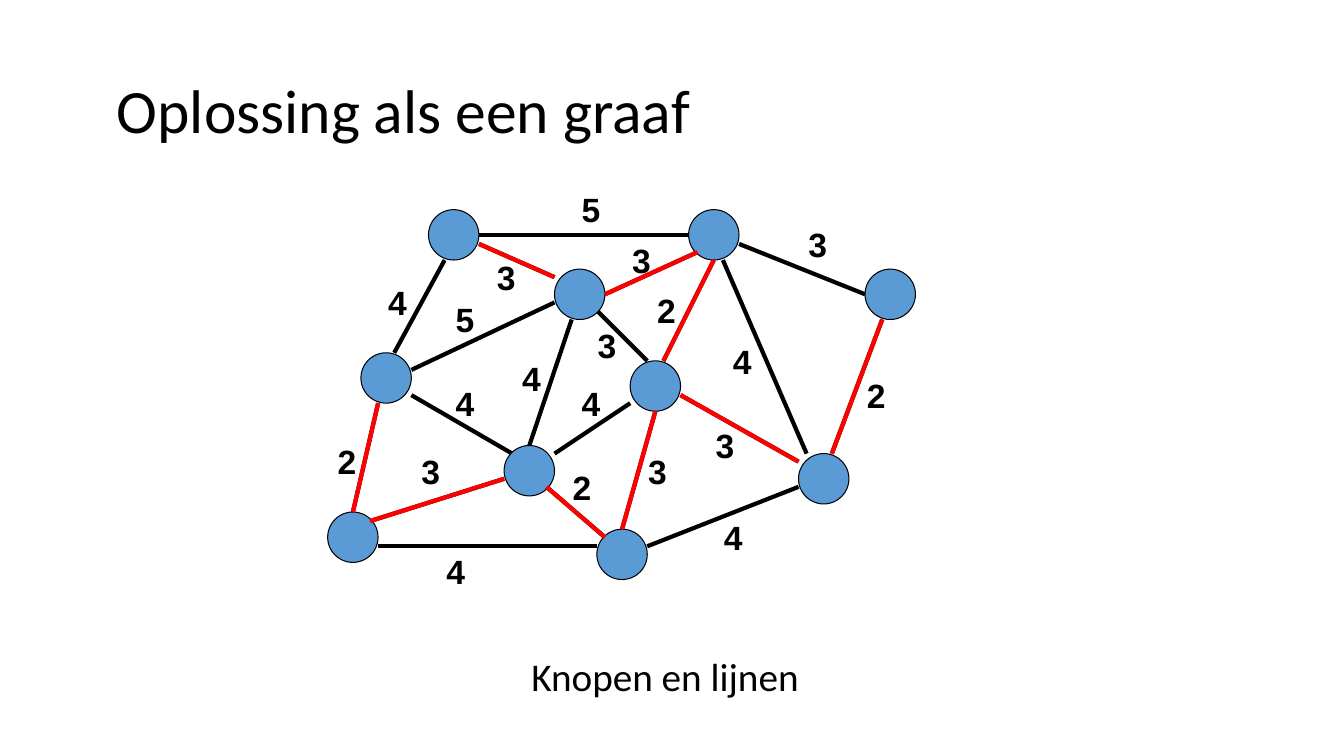
"""Build a slide that shows a weighted graph with its solution tree in red."""
from dataclasses import dataclass

from lxml import etree
from pptx import Presentation
from pptx.dml.color import RGBColor
from pptx.enum import shapes, text
from pptx.oxml import ns
from pptx.util import Inches, Pt

TITLE = " Oplossing als een graaf"
CAPTION = "Knopen en lijnen"

NODES = [
    (4.25, 2.08), (6.83, 2.08), (8.58, 2.67), (6.25, 3.58), (5.5, 2.67),
    (3.58, 3.5), (3.25, 5.08), (5, 4.42), (5.92, 5.25), (7.92, 4.5),
]

# start, end, weight, weight position
TREE_EDGES = [
    ((3.67, 5.17), (5, 4.75), 3, (4.08, 4.42)),
    ((3.75, 4), (3.5, 5.08), 2, (3.25, 4.33)),
    ((5.42, 4.83), (6, 5.33), 2, (5.58, 4.58)),
    ((4.75, 2.42), (5.5, 2.75), 3, (4.83, 2.5)),
    ((6, 2.92), (6.92, 2.5), 3, (6.17, 2.33)),
    ((6.5, 4.08), (6.17, 5.25), 3, (6.33, 4.42)),
    ((6.75, 3.92), (7.92, 4.58), 3, (7, 4.17)),
    ((8.75, 3.17), (8.25, 4.5), 2, (8.5, 3.67)),
    ((7.08, 2.58), (6.58, 3.58), 2, (6.42, 2.83)),
]
OTHER_EDGES = [
    ((3.91, 3.5), (4.41, 2.58), 4, (3.75, 2.75)),
    ((3.75, 5.42), (5.92, 5.42), 4, (4.33, 5.42)),
    ((4.08, 3.67), (5.5, 3), 5, (4.42, 2.92)),
    ((4.75, 2.33), (6.83, 2.33), 5, (5.67, 1.83)),
    ((7.33, 2.42), (8.58, 2.92), 3, (7.92, 2.17)),
    ((5.67, 3.17), (5.25, 4.42), 4, (5.08, 3.5)),
    ((4.08, 3.92), (5.08, 4.5), 4, (4.42, 3.75)),
    ((5.92, 3.08), (6.42, 3.58), 3, (5.83, 3.17)),
    ((5.5, 4.5), (6.25, 4), 4, (5.67, 3.75)),
    ((6.42, 5.42), (7.92, 4.83), 4, (7.08, 5.08)),
    ((7.17, 2.58), (8, 4.5), 4, (7.17, 3.33)),
]
EDGES = OTHER_EDGES + TREE_EDGES


@dataclass(frozen=True)
class Theme:
    """Colours, fonts and sizes of the slide."""
    ink: RGBColor = RGBColor(0, 0, 0)
    tree: RGBColor = RGBColor(0xFF, 0, 0)
    node: RGBColor = RGBColor(0x5B, 0x9B, 0xD5)
    text_font: str = "Calibri"
    weight_font: str = "Arial"
    title_size: int = 44
    caption_size: int = 28
    weight_size: int = 24
    edge_width: float = 3
    node_outline: float = 0.75


THEME = Theme()


def style(paragraph, font, size, bold=False):
    """Set the font of a whole paragraph."""
    paragraph.font.name = font
    paragraph.font.size = Pt(size)
    paragraph.font.bold = bold
    paragraph.font.color.rgb = THEME.ink


def fill_placeholder(holder, words, box, size, spacing):
    """Place a template placeholder and write one left-aligned line in it."""
    holder.left, holder.top, holder.width, holder.height = map(Inches, box)
    holder.text_frame.text = words
    holder.text_frame.auto_size = text.MSO_AUTO_SIZE.NONE
    line = holder.text_frame.paragraphs[0]
    line.alignment = text.PP_ALIGN.LEFT
    line.line_spacing = spacing
    style(line, THEME.text_font, size)
    return line


def draw_edges(slide, edges, colour):
    """Draw edges as one group of straight lines."""
    group = slide.shapes.add_group_shape()
    for start, end, *_ in edges:
        edge = group.shapes.add_connector(
            shapes.MSO_CONNECTOR.STRAIGHT, *map(Inches, start + end))
        edge.line.color.rgb = colour
        edge.line.width = Pt(THEME.edge_width)
        etree.SubElement(edge._element.spPr, ns.qn("a:effectLst"))


def draw_weights(slide, edges):
    """Write the weight beside each edge."""
    group = slide.shapes.add_group_shape()
    for *_, weight, place in edges:
        label = group.shapes.add_textbox(*map(Inches, place + (0.39, 0.5)))
        label.text_frame.text = str(weight)
        label.text_frame.word_wrap = False
        label.text_frame.auto_size = text.MSO_AUTO_SIZE.SHAPE_TO_FIT_TEXT
        style(label.text_frame.paragraphs[0], THEME.weight_font, THEME.weight_size, bold=True)


def draw_nodes(slide):
    """Draw the nodes as one group of circles."""
    group = slide.shapes.add_group_shape()
    for place in NODES:
        node = group.shapes.add_shape(
            shapes.MSO_SHAPE.OVAL, *map(Inches, place + (0.5, 0.5)))
        node.shadow.inherit = False
        node.fill.solid()
        node.fill.fore_color.rgb = THEME.node
        node.line.color.rgb = THEME.ink
        node.line.width = Pt(THEME.node_outline)


def main():
    """Build and save the slide."""
    deck = Presentation()
    deck.slide_width, deck.slide_height = Inches(13.33), Inches(7.5)
    slide = deck.slides.add_slide(deck.slide_layouts[1])

    fill_placeholder(slide.shapes.title, TITLE, (0.92, 0.4, 11.5, 1.45), THEME.title_size, 0.9)
    slide.shapes.title.text_frame.vertical_anchor = text.MSO_ANCHOR.MIDDLE

    caption = fill_placeholder(
        slide.placeholders[1], CAPTION, (5.17, 6.51, 2.99, 0.51), THEME.caption_size, 0.8)
    caption.space_before = Pt(10)
    bullet = caption._p.get_or_add_pPr()
    bullet.set("marL", "0")
    bullet.set("indent", "0")
    bullet.insert_element_before(
        bullet.makeelement(ns.qn("a:buNone")), "a:tabLst", "a:defRPr", "a:extLst")

    draw_edges(slide, EDGES, THEME.ink)
    draw_weights(slide, EDGES)
    draw_nodes(slide)
    draw_edges(slide, TREE_EDGES, THEME.tree)
    deck.save("out.pptx")


if __name__ == "__main__":
    main()
